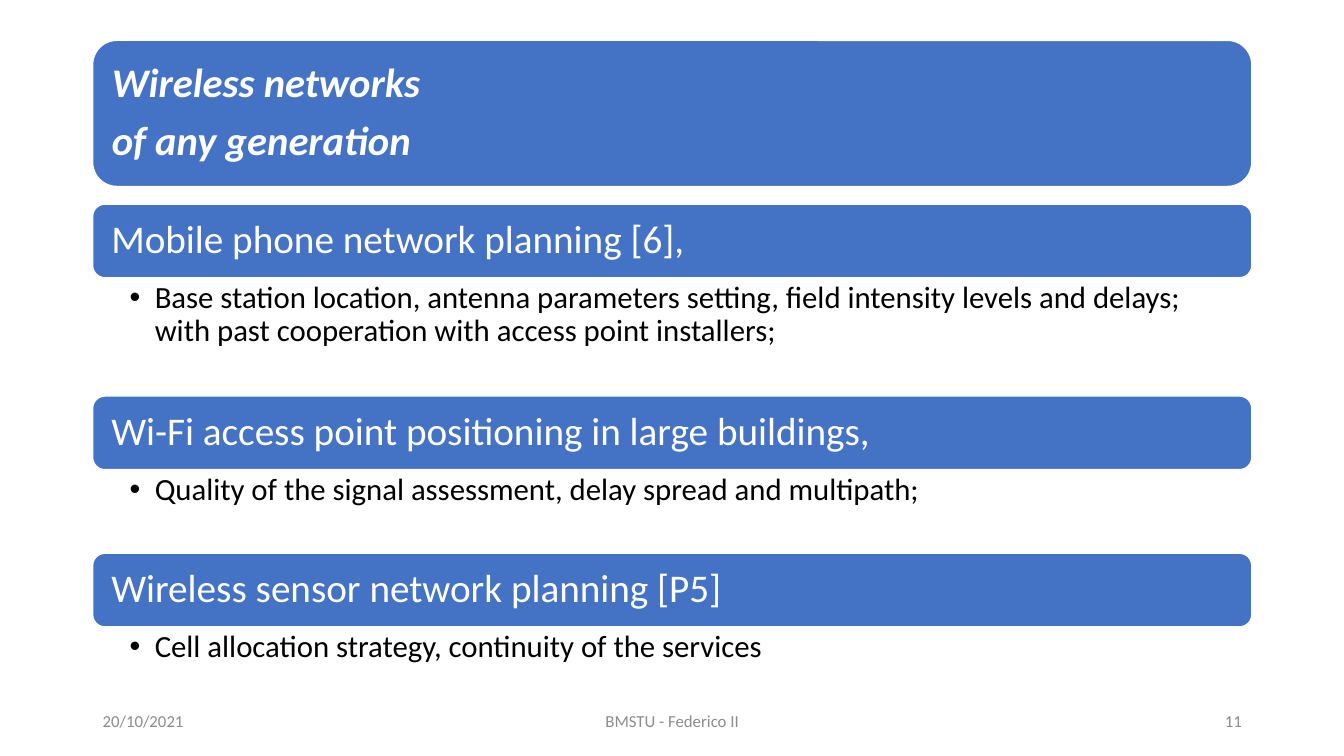
from lxml import etree
from pptx import Presentation
from pptx import util as u
from pptx.dml.color import RGBColor
from pptx.enum import shapes, text
from pptx.oxml.ns import qn

Pt = u.Pt
COLORS = {"bar": "4472C4", "white": "FFFFFF", "body": "000000", "footer": "8C8C8C"}
LEFT, WIDTH = 66.2, 828
TITLE_TOP, TITLE_HEIGHT = 28.8, 104.4
TOPICS_TOP, BAR_HEIGHT = 145.8, 52.6
TOPICS = [
    ("Mobile phone network planning [6],",
     "Base station location, antenna parameters setting, field intensity levels "
     "and delays; with past cooperation with access point installers;", 84.5),
    ("Wi-Fi access point positioning in large buildings,",
     "Quality of the signal assessment, delay spread and multipath;", 59.7),
    ("Wireless sensor network planning [P5]",
     "Cell allocation strategy, continuity of the services", 36.7),
]
FOOTERS = [
    ("20/10/2021", 66.2, 216, text.PP_ALIGN.LEFT),
    ("BMSTU - Federico II", 318.2, 324, text.PP_ALIGN.CENTER),
    ("11", 678.2, 216, text.PP_ALIGN.RIGHT),
]


def rgb(name):
    """Return the named colour."""
    return RGBColor.from_string(COLORS[name])


def apply(target, values):
    """Set each attribute of the target from a dict."""
    for key, value in values.items():
        setattr(target, key, value)


def write(frame, lines, margins, anchor, color, font, paragraph_format, bullet=False):
    """Fill a text frame with evenly formatted paragraphs."""
    sides = ("margin_left", "margin_top", "margin_right", "margin_bottom")
    apply(frame, {"word_wrap": True, "auto_size": text.MSO_AUTO_SIZE.NONE,
                  "vertical_anchor": anchor})
    apply(frame, {side: Pt(margin) for side, margin in zip(sides, margins)})
    frame.text = "\n".join(lines)
    for paragraph in frame.paragraphs:
        if bullet:
            add_bullet(paragraph)
        apply(paragraph, paragraph_format)
        apply(paragraph.font, {"name": "Calibri", **font})
        paragraph.font.color.rgb = rgb(color)


def add_bullet(paragraph):
    """Give a paragraph a hanging round bullet."""
    properties = paragraph._p.get_or_add_pPr()
    properties.set("marL", str(Pt(18)))
    properties.set("indent", str(-Pt(18)))
    etree.SubElement(properties, qn("a:buFont")).set("typeface", "Arial")
    etree.SubElement(properties, qn("a:buChar")).set("char", "•")


def add_bar(slide, top, height):
    """Add a full-width rounded bar."""
    bar = slide.shapes.add_shape(shapes.MSO_SHAPE.ROUNDED_RECTANGLE,
                                 Pt(LEFT), Pt(top), Pt(WIDTH), Pt(height))
    bar.shadow.inherit = False
    bar.fill.solid()
    bar.fill.fore_color.rgb = rgb("bar")
    bar.line.color.rgb = rgb("white")
    bar.line.width = Pt(1)
    return bar


def add_title(slide, lines):
    """Place the title over its own bar."""
    bar = add_bar(slide, TITLE_TOP, TITLE_HEIGHT)
    title = slide.shapes.title
    title._element.addprevious(bar._element)
    apply(title, {"left": Pt(LEFT), "top": Pt(TITLE_TOP),
                  "width": Pt(WIDTH), "height": Pt(TITLE_HEIGHT)})
    write(title.text_frame, lines, (13.7, 8.6, 13.7, 8.6), text.MSO_ANCHOR.MIDDLE,
          "white", {"size": Pt(29), "bold": True, "italic": True},
          {"alignment": text.PP_ALIGN.LEFT, "line_spacing": 0.9,
           "space_before": Pt(0), "space_after": Pt(10.2)})


def add_topic(slide, top, heading, detail, detail_height):
    """Add a heading bar with its bulleted detail below."""
    bar = add_bar(slide, top, BAR_HEIGHT)
    write(bar.text_frame, [heading], (10.8, 8.6, 10.8, 8.6), text.MSO_ANCHOR.MIDDLE,
          "white", {"size": Pt(28)},
          {"alignment": text.PP_ALIGN.LEFT, "line_spacing": 0.9})
    detail_box = slide.shapes.add_textbox(Pt(LEFT), Pt(top + BAR_HEIGHT),
                                          Pt(WIDTH), Pt(detail_height))
    write(detail_box.text_frame, [detail], (26.4, 2.9, 15.8, 2.9), text.MSO_ANCHOR.TOP,
          "body", {"size": Pt(22)}, {"line_spacing": 0.9}, bullet=True)


def add_footer(slide, label, left, width, alignment):
    """Add one part of the footer line."""
    footer = slide.shapes.add_textbox(Pt(left), Pt(500.4), Pt(width), Pt(28.8))
    write(footer.text_frame, [label], (7.2, 3.6, 7.2, 3.6), text.MSO_ANCHOR.MIDDLE,
          "footer", {"size": Pt(12)}, {"alignment": alignment})


def main():
    """Build the slide and save it."""
    deck = Presentation()
    apply(deck, {"slide_width": Pt(960), "slide_height": Pt(540)})
    slide = deck.slides.add_slide(deck.slide_layouts.get_by_name("Title Only"))
    add_title(slide, ["Wireless networks", "of any generation"])
    top = TOPICS_TOP
    for heading, detail, detail_height in TOPICS:
        add_topic(slide, top, heading, detail, detail_height)
        top += BAR_HEIGHT + detail_height
    for footer in FOOTERS:
        add_footer(slide, *footer)
    deck.save("out.pptx")


if __name__ == "__main__":
    main()
